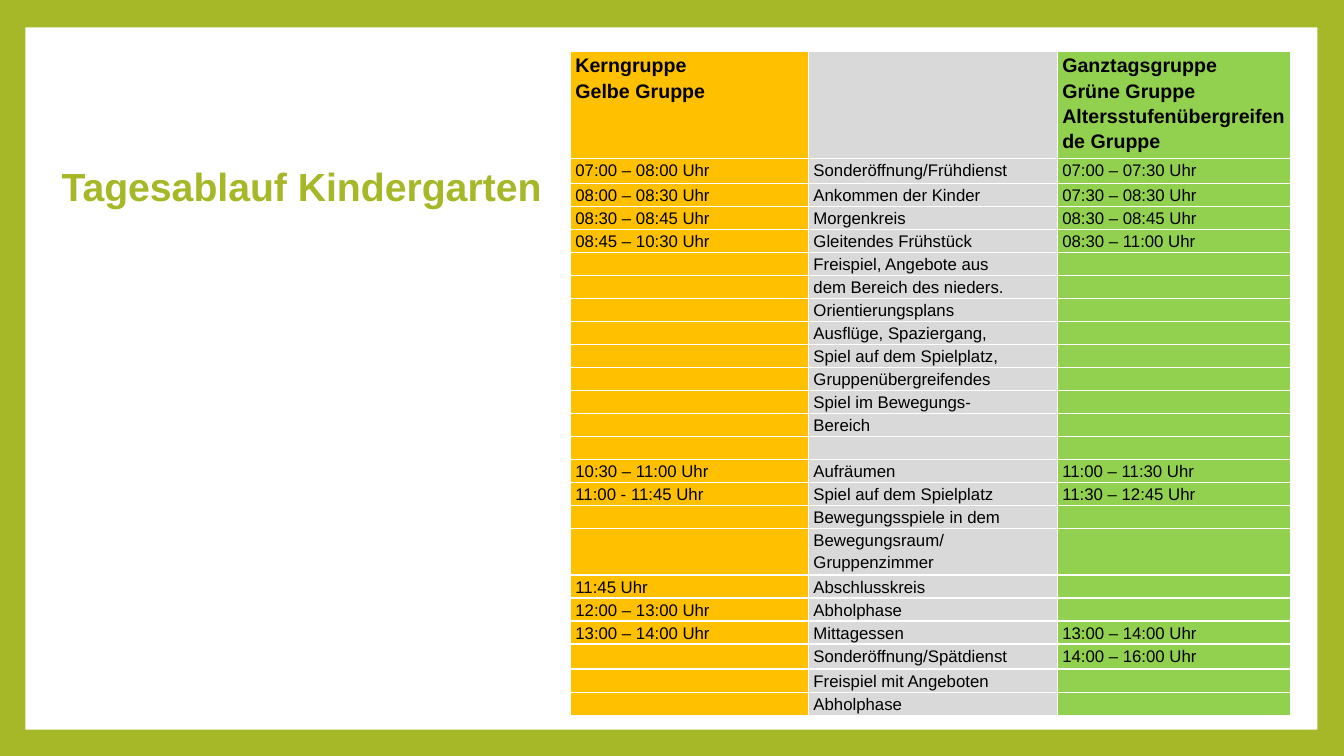
from lxml import etree
from pptx import Presentation
from pptx.dml.color import RGBColor
from pptx.enum import shapes, text
from pptx.oxml import ns
from pptx.util import Cm, Pt

COLOURS = {
    "lime": "A6B727",
    "panel": "FFFFFF",
    "text": "000000",
    "core": "FFC000",
    "activity": "D9D9D9",
    "all_day": "92D050",
}
HEADER = (
    "Kerngruppe\nGelbe Gruppe",
    "",
    "Ganztagsgruppe\nGrüne Gruppe\nAltersstufenübergreifende Gruppe",
)
SCHEDULE = [
    ("07:00 – 08:00 Uhr", "Sonderöffnung/Frühdienst", "07:00 – 07:30 Uhr"),
    ("08:00 – 08:30 Uhr", "Ankommen der Kinder", "07:30 – 08:30 Uhr"),
    ("08:30 – 08:45 Uhr", "Morgenkreis", "08:30 – 08:45 Uhr"),
    ("08:45 – 10:30 Uhr", "Gleitendes Frühstück", "08:30 – 11:00 Uhr"),
    ("", "Freispiel, Angebote aus", ""),
    ("", "dem Bereich des nieders.", ""),
    ("", "Orientierungsplans", ""),
    ("", "Ausflüge, Spaziergang,", ""),
    ("", "Spiel auf dem Spielplatz,", ""),
    ("", "Gruppenübergreifendes", ""),
    ("", "Spiel im Bewegungs-", ""),
    ("", "Bereich", ""),
    ("", "", ""),
    ("10:30 – 11:00 Uhr", "Aufräumen", "11:00 – 11:30 Uhr"),
    ("11:00 - 11:45 Uhr", "Spiel auf dem Spielplatz", "11:30 – 12:45 Uhr"),
    ("", "Bewegungsspiele in dem", ""),
    ("", "Bewegungsraum/ Gruppenzimmer", ""),
    ("11:45 Uhr", "Abschlusskreis", ""),
    ("12:00 – 13:00 Uhr", "Abholphase", ""),
    ("13:00 – 14:00 Uhr", "Mittagessen", "13:00 – 14:00 Uhr"),
    ("", "Sonderöffnung/Spätdienst", "14:00 – 16:00 Uhr"),
    ("", "Freispiel mit Angeboten", ""),
    ("", "Abholphase", ""),
]
COLUMNS = [("core", 6), ("activity", 6.27), ("all_day", 5.87)]
ROW_HEIGHT = 0.58
SPECIAL_HEIGHTS = {0: 2.69, 1: 0.63, 17: 1.17, 21: 0.63}


def paint(fill, name):
    fill.solid()
    fill.fore_color.rgb = RGBColor.from_string(COLOURS[name])


def style(para, size, colour, bold, spacing):
    para.line_spacing = spacing
    para.font.name = "Arial"
    para.font.size = Pt(size)
    para.font.bold = bold
    para.font.color.rgb = RGBColor.from_string(COLOURS[colour])


deck = Presentation()
deck.slide_width, deck.slide_height = Cm(33.87), Cm(19.05)
page = deck.slides.add_slide(deck.slide_layouts[5])
paint(page.background.fill, "lime")

# White panel, sent behind the title
panel = page.shapes.add_shape(
    shapes.MSO_SHAPE.RECTANGLE, Cm(0.64), Cm(0.69), Cm(32.56), Cm(17.7))
panel.shadow.inherit = False
paint(panel.fill, "panel")
panel.line.fill.background()
page.shapes.title.element.addprevious(panel.element)

# Title
title = page.shapes.title
title.left, title.top, title.width, title.height = Cm(1.17), Cm(4.09), Cm(13.2), Cm(11.18)
frame = title.text_frame
frame.text = "Tagesablauf Kindergarten"
frame.word_wrap = True
frame.auto_size = text.MSO_AUTO_SIZE.NONE
frame.vertical_anchor = text.MSO_ANCHOR.TOP
frame.margin_left = Cm(0.38)
frame.paragraphs[0].alignment = text.PP_ALIGN.LEFT
style(frame.paragraphs[0], 28, "lime", True, 0.9)

# Timetable: the default table style supplies the white grid lines
rows = [HEADER] + SCHEDULE
heights = [SPECIAL_HEIGHTS.get(index, ROW_HEIGHT) for index in range(len(rows))]
table = page.shapes.add_table(
    len(rows), len(COLUMNS), Cm(14.38), Cm(1.3),
    Cm(sum(width for _, width in COLUMNS)), Cm(sum(heights))).table
table.horz_banding = False
for column, (_, width) in zip(table.columns, COLUMNS):
    column.width = Cm(width)

for row_index, (entries, height) in enumerate(zip(rows, heights)):
    table.rows[row_index].height = Cm(height)
    is_header = row_index == 0
    for column_index, (entry, (colour, _)) in enumerate(zip(entries, COLUMNS)):
        cell = table.cell(row_index, column_index)
        paint(cell.fill, colour)
        cell.margin_left = cell.margin_right = Cm(0.12)
        cell.margin_top = cell.margin_bottom = 0
        cell.text = entry
        for para in cell.text_frame.paragraphs:
            style(para, 14 if is_header else 12, "text", is_header, 1.15)
            if not entry:  # keeps empty rows from growing
                etree.SubElement(para._p, ns.qn("a:endParaRPr"), sz="1200")

deck.save("out.pptx")
